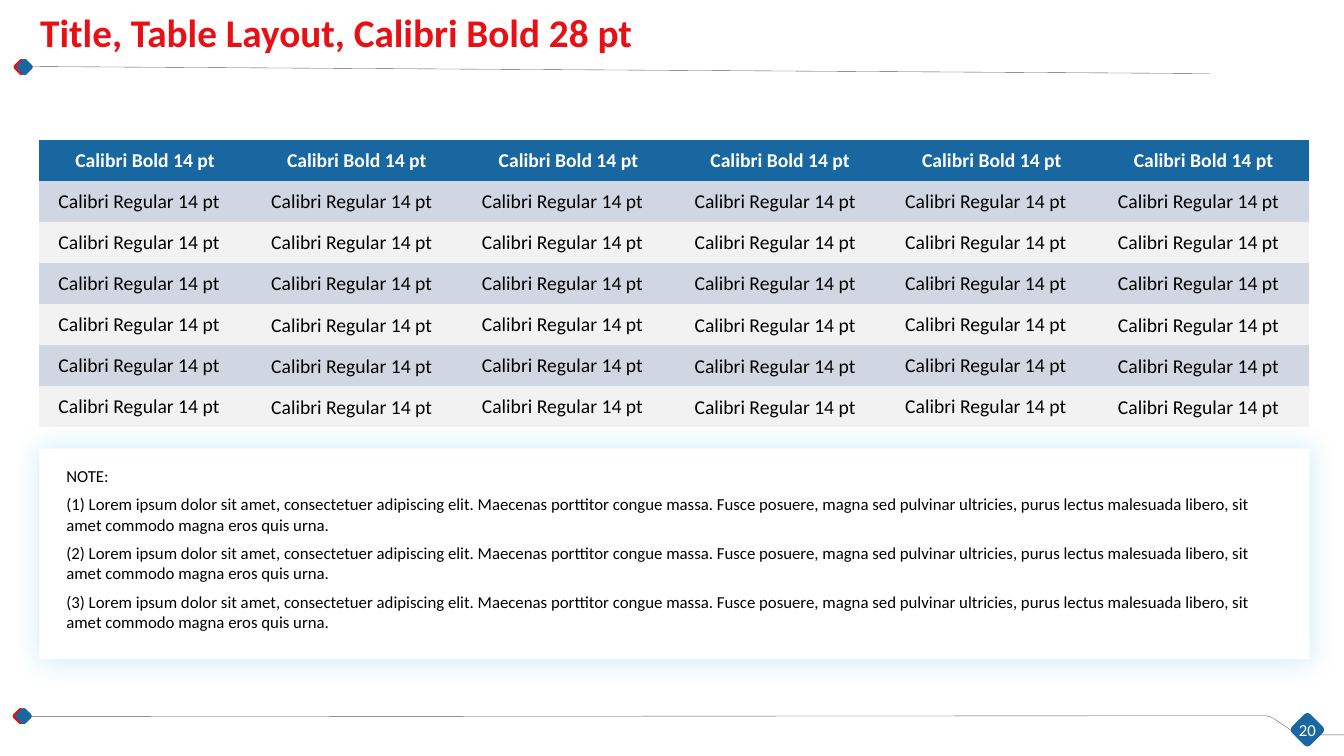
"""Build the table layout slide on a grid of tenth-inch columns and rows."""
from dataclasses import dataclass
from typing import Any

from lxml import etree
from pptx import Presentation
from pptx import util as u
from pptx.dml import color
from pptx.enum import shapes, text
from pptx.oxml import ns

UNIT = u.Inches(0.1)
WIDE, HIGH = 133.33, 75
RED, BLUE, GREY, WHITE, BLACK = "E81014", "1867A1", "58595B", "FFFFFF", "000000"
BANDS = ("D1D7E2", "F2F2F2")
PLAIN = "{2D5ABB26-0587-4C30-8999-92F81FD0307C}"
COLS, ROWS = 6, 7
LOREM = (
    "Lorem ipsum dolor sit amet, consectetuer adipiscing elit. Maecenas porttitor "
    "congue massa. Fusce posuere, magna sed pulvinar ultricies, purus lectus "
    "malesuada libero, sit amet commodo magna eros quis urna."
)


@dataclass(frozen=True)
class Box:
    left: float
    top: float
    width: float
    height: float

    def place(self) -> tuple[int, ...]:
        return tuple(grid(v) for v in (self.left, self.top, self.width, self.height))


@dataclass(frozen=True)
class Gem:
    left: float
    top: float
    size: float
    fill: str
    curve: float


@dataclass(frozen=True)
class Rule:
    points: tuple[tuple[float, float], ...]


GEMS = (
    Gem(128.4, 71.1, 2.6, BLUE, 0.17),
    *(
        Gem(left + step, top, 1.3, fill, 0.22)
        for left, top in ((1.4, 70.4), (1.5, 6))
        for step, fill in ((0, RED), (0.3, BLUE))
    ),
)
RULES = (
    Rule(((2.3, 6.6), (120, 7.3))),
    Rule((
        (WIDE, 72.9), (129.2, 72.9), (128.7, 72.8), (128.3, 72.6),
        (126.4, 71.3), (126, 71.1), (125.5, 71), (2.4, 71.1),
    )),
)
TITLE = Box(3, 0.3, 121.2, 5.7)
TABLE = Box(3.9, 13.9, 126, 28.5)
PANEL = Box(3.9, 44.5, 126, 20.9)
NOTES = Box(5.6, 45.7, 122, 17.7)
PAGE = Box(127.4, 71.4, 4.6, 1.9)


def grid(cells: float) -> int:
    return round(cells * UNIT)


def hue(code: str) -> color.RGBColor:
    return color.RGBColor.from_string(code)


def write(frame: Any, *lines: str, size: float, ink: str = BLACK, bold: bool = False,
          align: Any = text.PP_ALIGN.LEFT, gap: float = 0, lead: float = 1,
          indent: tuple[float, float] = (0, 0)) -> None:
    for i, line in enumerate(lines):
        para = frame.add_paragraph() if i else frame.paragraphs[0]
        props = para._p.get_or_add_pPr()
        props.set("marL", str(grid(indent[0])))
        props.set("indent", str(grid(indent[1])))
        para.alignment, para.line_spacing = align, lead
        para.space_before = u.Pt(gap if i else 0)
        run = para.add_run()
        run.text = line
        font = run.font
        font.name, font.size, font.bold = "Calibri", u.Pt(size), bold
        font.color.rgb = hue(ink)


def area(slide: Any, box: Box, anchor: Any, inset: bool = True) -> Any:
    frame = slide.shapes.add_textbox(*box.place()).text_frame
    frame.word_wrap, frame.vertical_anchor = True, anchor
    if not inset:
        frame.margin_left = frame.margin_right = 0
        frame.margin_top = frame.margin_bottom = 0
    return frame


def block(slide: Any, kind: Any, box: Box, fill: str) -> Any:
    shape = slide.shapes.add_shape(kind, *box.place())
    shape.shadow.inherit = False
    shape.fill.solid()
    shape.fill.fore_color.rgb = hue(fill)
    shape.line.fill.background()
    return shape


def jewel(slide: Any, gem: Gem) -> None:
    box = Box(gem.left, gem.top, gem.size, gem.size)
    shape = block(slide, shapes.MSO_SHAPE.ROUNDED_RECTANGLE, box, gem.fill)
    shape.adjustments[0] = gem.curve
    shape.rotation = 45


def trace(slide: Any, rule: Rule) -> None:
    first, *rest = [(grid(x), grid(y)) for x, y in rule.points]
    pen = slide.shapes.build_freeform(*first)
    pen.add_line_segments(rest, close=False)
    shape = pen.convert_to_shape()
    shape.shadow.inherit = False
    shape.fill.background()
    shape.line.color.rgb = hue(GREY)
    shape.line.width = u.Pt(0.25)


def glow(shape: Any, code: str, blur: float, share: int) -> None:
    list_ = shape._element.spPr.find(ns.qn("a:effectLst"))
    cast = etree.SubElement(list_, ns.qn("a:outerShdw"), blurRad=str(u.Pt(blur)),
                            dist="0", dir="0", algn="ctr", rotWithShape="0")
    tint = etree.SubElement(cast, ns.qn("a:srgbClr"), val=code)
    etree.SubElement(tint, ns.qn("a:alpha"), val=str(share * 1000))


def chart(slide: Any) -> None:
    table = slide.shapes.add_table(ROWS, COLS, *TABLE.place()).table
    table._tbl.tblPr.find(ns.qn("a:tableStyleId")).text = PLAIN
    for col in table.columns:
        col.width = grid(TABLE.width / COLS)
    for r, row in enumerate(table.rows):
        row.height = grid(TABLE.height / ROWS)
        for c, cell in enumerate(row.cells):
            pad = grid(0.1) if r and c % 2 else 0
            cell.margin_left = cell.margin_right = cell.margin_top = pad
            cell.margin_bottom = 0
            cell.vertical_anchor = text.MSO_ANCHOR.MIDDLE
            cell.fill.solid()
            cell.fill.fore_color.rgb = hue(BANDS[(r - 1) % 2] if r else BLUE)
            if r:
                write(cell.text_frame, "Calibri Regular 14 pt", size=14, indent=(1, 0.9))
            else:
                write(cell.text_frame, "Calibri Bold 14 pt", size=14, ink=WHITE,
                      bold=True, align=text.PP_ALIGN.CENTER)


def main() -> None:
    deck = Presentation()
    deck.slide_width, deck.slide_height = grid(WIDE), grid(HIGH)
    slide = deck.slides.add_slide(deck.slide_layouts[6])
    for rule in RULES:
        trace(slide, rule)
    for gem in GEMS:
        jewel(slide, gem)
    panel = block(slide, shapes.MSO_SHAPE.RECTANGLE, PANEL, WHITE)
    glow(panel, "13ABE3", 20, 22)
    write(area(slide, TITLE, text.MSO_ANCHOR.BOTTOM),
          "Title, Table Layout, Calibri Bold 28 pt", size=28, ink=RED, bold=True, lead=0.9)
    write(area(slide, PAGE, text.MSO_ANCHOR.MIDDLE, inset=False), "20",
          size=12, ink=WHITE, align=text.PP_ALIGN.CENTER)
    write(area(slide, NOTES, text.MSO_ANCHOR.TOP), "NOTE:",
          *(f"({n}) {LOREM}" for n in range(1, 4)), size=12, gap=6)
    chart(slide)
    deck.save("out.pptx")


if __name__ == "__main__":
    main()
